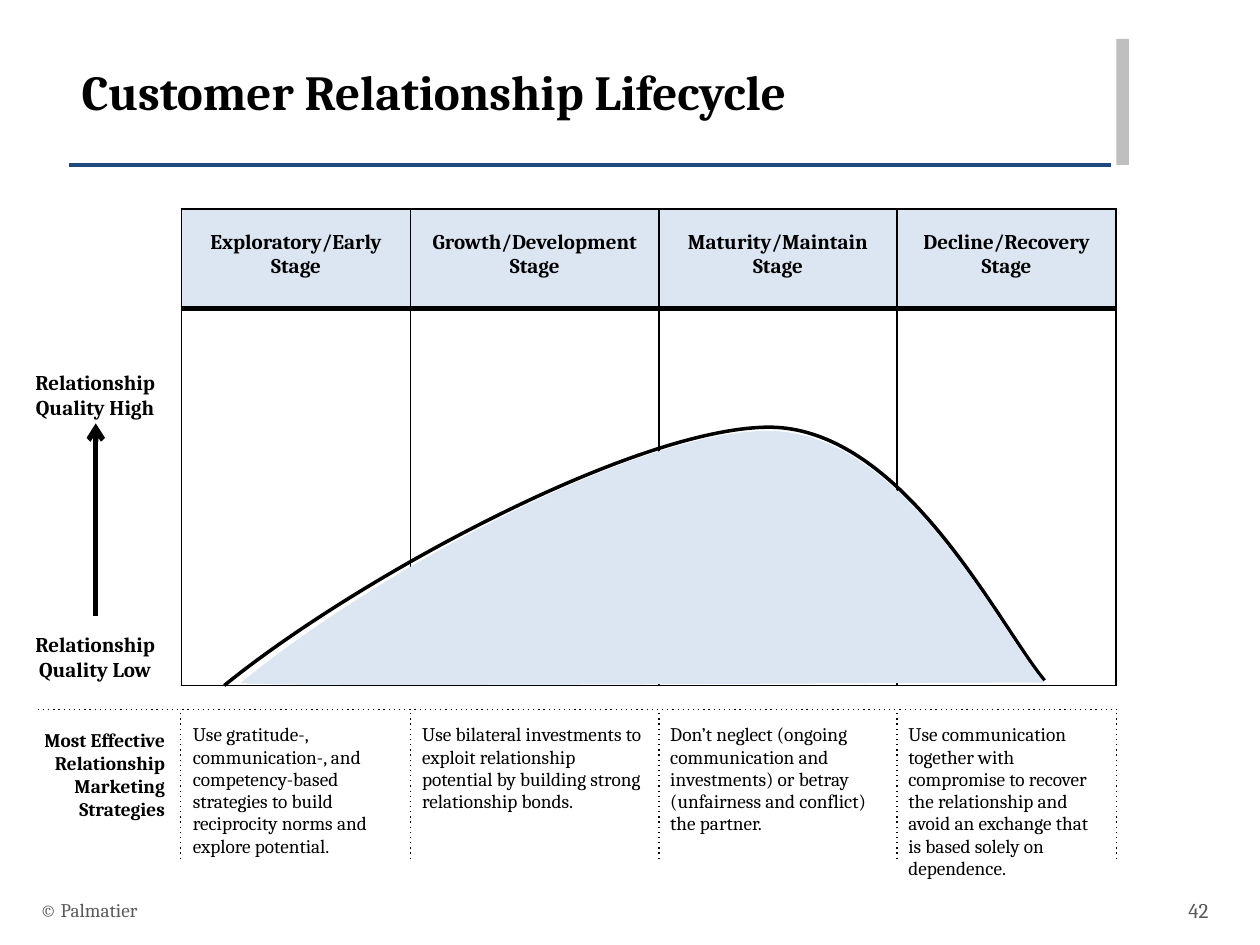
from dataclasses import dataclass
from itertools import accumulate
from typing import NamedTuple

from lxml import etree
from pptx import Presentation, util as u
from pptx.dml.color import RGBColor
from pptx.enum import shapes, text
from pptx.oxml import ns


@dataclass(frozen=True)
class Theme:
    font: str = "Cambria"
    ink: str = "000000"
    muted: str = "595959"
    rule: str = "1F497D"
    bar: str = "BFBFBF"
    tint: str = "DCE6F2"
    paper: str = "FFFFFF"
    title: int = 28
    label: int = 12
    body: int = 11
    tiny: int = 8


class Stage(NamedTuple):
    name: str
    width: float
    strategy: str


class Label(NamedTuple):
    wording: str
    box: tuple[float, float, float, float]
    style: dict


class Rule(NamedTuple):
    start: tuple[float, float]
    end: tuple[float, float]
    weight: float
    color: str
    dotted: bool = False
    arrow: bool = False


class RowStyle(NamedTuple):
    height: float
    fill: str | None
    borders: dict[str, int]


THEME = Theme()
LEFT, CENTER, RIGHT = text.PP_ALIGN.LEFT, text.PP_ALIGN.CENTER, text.PP_ALIGN.RIGHT
MIDDLE = text.MSO_ANCHOR.MIDDLE
TABLE_LEFT, TABLE_TOP = 1.44, 1.66
NO_STYLE_NO_GRID = "{2D5ABB26-0587-4C30-8999-92F81FD0307C}"

STAGES = [
    Stage("Exploratory/Early Stage", 1.82,
          "Use gratitude-, communication-, and competency-based strategies "
          "to build reciprocity norms and explore potential."),
    Stage("Growth/Development Stage", 1.97,
          "Use bilateral investments to exploit relationship potential by "
          "building strong relationship bonds."),
    Stage("Maturity/Maintain Stage", 1.89,
          "Don’t neglect (ongoing communication and investments) or betray "
          "(unfairness and conflict) the partner."),
    Stage("Decline/Recovery Stage", 1.74,
          "Use communication together with compromise to recover the relationship "
          "and avoid an exchange that is based solely on dependence."),
]
EDGES = list(accumulate((stage.width for stage in STAGES), initial=TABLE_LEFT))

ROWS = [
    RowStyle(0.79, THEME.tint, {"L": 1, "R": 1, "T": 1, "B": 3}),
    RowStyle(2.99, THEME.paper, {"L": 1, "R": 1, "T": 3, "B": 1}),
    RowStyle(0.26, None, {"T": 1}),
    RowStyle(2.03, None, {}),
]

CURVE = [(1.78, 5.44), (2.84, 4.58), (5.05, 3.39), (6.11, 3.39),
         (7.18, 3.40), (7.93, 4.97), (8.29, 5.40)]
AREA = [(1.91, 5.42), (2.97, 4.55), (5.05, 3.41), (6.11, 3.42),
        (7.18, 3.43), (7.93, 5.00), (8.29, 5.42),
        (8.23, 5.41), (1.89, 5.46), (1.91, 5.42)]

RULES = [
    Rule((0.55, 1.31), (8.82, 1.31), 2, THEME.rule),
    Rule((0.76, 4.89), (0.76, 3.36), 3, THEME.ink, arrow=True),
    Rule((0.3, 5.63), (EDGES[-1], 5.63), 0.75, THEME.ink, dotted=True),
    *(Rule((x, 5.66), (x, 6.81), 0.75, THEME.ink, dotted=True)
      for x in (TABLE_LEFT - 0.01, *EDGES[1:])),
]

AXIS_STYLE = dict(size=THEME.label, bold=True, align=CENTER)
LABELS = [
    Label("Customer Relationship Lifecycle", (0.55, 0.45, 8.26, 0.8),
          dict(size=THEME.title, bold=True, inset=0.1)),
    Label("Relationship Quality High", (0.08, 2.89, 1.35, 0.49), AXIS_STYLE),
    Label("Relationship Quality Low", (0.08, 4.97, 1.35, 0.49), AXIS_STYLE),
    Label("Most Effective Relationship Marketing Strategies", (0, 5.74, 1.4, 0.83),
          dict(size=THEME.body, bold=True, align=RIGHT)),
    Label("© Palmatier", (0.22, 7.02, 6.7, 0.4),
          dict(size=THEME.body, color=THEME.muted, anchor=MIDDLE, inset=0.1)),
    Label("42", (9.08, 7.02, 0.61, 0.4),
          dict(size=THEME.label, color=THEME.muted, align=RIGHT, anchor=MIDDLE, inset=0.1)),
]


def rgb(color: str) -> RGBColor:
    return RGBColor.from_string(color)


def write(frame, wording: str, *, size: int, bold: bool = False,
          color: str = THEME.ink, align=LEFT) -> None:
    frame.word_wrap = True
    paragraph = frame.paragraphs[0]
    paragraph.alignment = align
    run = paragraph.add_run()
    run.text = wording
    run.font.name, run.font.size, run.font.bold = THEME.font, u.Pt(size), bold
    run.font.color.rgb = rgb(color)


def add_label(slide, label: Label) -> None:
    frame = slide.shapes.add_textbox(*map(u.Inches, label.box)).text_frame
    style = dict(label.style)
    frame.vertical_anchor = style.pop("anchor", text.MSO_ANCHOR.TOP)
    frame.margin_left = frame.margin_right = u.Inches(style.pop("inset", 0.09))
    frame.margin_top = frame.margin_bottom = u.Inches(0.04)
    write(frame, label.wording, **style)


def add_rule(slide, rule: Rule) -> None:
    connector = slide.shapes.add_connector(
        shapes.MSO_CONNECTOR.STRAIGHT, *map(u.Inches, rule.start + rule.end))
    connector.line.color.rgb = rgb(rule.color)
    connector.line.width = u.Pt(rule.weight)
    outline = connector.line._get_or_add_ln()
    if rule.dotted:
        etree.SubElement(outline, ns.qn("a:prstDash"), val="dot")
    if rule.arrow:
        etree.SubElement(outline, ns.qn("a:tailEnd"), type="arrow")
    etree.SubElement(connector._element.spPr, ns.qn("a:effectLst"))


def add_curve(slide, points: list[tuple[float, float]], fill: str | None = None) -> None:
    """Draw chained cubic curves: a filled area, or an open black line without a fill."""
    builder = slide.shapes.build_freeform(*map(u.Inches, points[0]))
    builder.add_line_segments([tuple(map(u.Inches, point)) for point in points[3::3]],
                              close=fill is not None)
    shape = builder.convert_to_shape()
    for i, segment in enumerate(list(shape._element.iter(ns.qn("a:lnTo")))):
        bezier = etree.Element(ns.qn("a:cubicBezTo"))
        for x, y in points[3 * i + 1:3 * i + 4]:
            etree.SubElement(bezier, ns.qn("a:pt"), x=str(u.Inches(x) - shape.left),
                             y=str(u.Inches(y) - shape.top))
        segment.getparent().replace(segment, bezier)
    shape.shadow.inherit = False
    if fill:
        shape.fill.solid()
        shape.fill.fore_color.rgb = rgb(fill)
        shape.line.fill.background()
    else:
        shape.fill.background()
        shape.line.color.rgb = rgb(THEME.ink)
        shape.line.width = u.Pt(2)


def style_cell(cell, style: RowStyle) -> None:
    properties = cell._tc.get_or_add_tcPr()
    for side in "LRTB":
        weight = style.borders.get(side, 0)
        border = etree.SubElement(properties, ns.qn(f"a:ln{side}"), w=str(u.Pt(weight)))
        if weight:
            paint = etree.SubElement(border, ns.qn("a:solidFill"))
            etree.SubElement(paint, ns.qn("a:srgbClr"), val=THEME.ink)
        else:
            etree.SubElement(border, ns.qn("a:noFill"))
    if style.fill:
        cell.fill.solid()
        cell.fill.fore_color.rgb = rgb(style.fill)
    else:
        cell.fill.background()
    cell.margin_left = cell.margin_right = u.Inches(0.09)
    cell.margin_top = cell.margin_bottom = u.Inches(0.05)


def add_stage_table(slide) -> None:
    height = sum(row.height for row in ROWS)
    table = slide.shapes.add_table(
        len(ROWS), len(STAGES),
        *map(u.Inches, (TABLE_LEFT, TABLE_TOP, EDGES[-1] - TABLE_LEFT, height))).table
    table.first_row = table.horz_banding = False
    table._tbl.tblPr.find(ns.qn("a:tableStyleId")).text = NO_STYLE_NO_GRID
    for r, style in enumerate(ROWS):
        table.rows[r].height = u.Inches(style.height)
        for c, stage in enumerate(STAGES):
            table.columns[c].width = u.Inches(stage.width)
            cell = table.cell(r, c)
            style_cell(cell, style)
            if r == 0:
                cell.vertical_anchor = text.MSO_ANCHOR.BOTTOM
                cell.margin_bottom = u.Inches(0.24)
                write(cell.text_frame, stage.name, size=THEME.label, bold=True, align=CENTER)
            elif r == len(ROWS) - 1:
                write(cell.text_frame, stage.strategy, size=THEME.body)
            else:
                etree.SubElement(cell.text_frame.paragraphs[0]._p, ns.qn("a:endParaRPr"),
                                 sz=str(THEME.tiny * 100))


def main() -> None:
    presentation = Presentation()
    presentation.slide_width, presentation.slide_height = u.Inches(10), u.Inches(7.5)
    slide = presentation.slides.add_slide(presentation.slide_layouts[6])
    bar = slide.shapes.add_shape(
        shapes.MSO_SHAPE.RECTANGLE, *map(u.Inches, (8.86, 0.31, 0.1, 1)))
    bar.shadow.inherit = False
    bar.fill.solid()
    bar.fill.fore_color.rgb = rgb(THEME.bar)
    bar.line.fill.background()
    add_stage_table(slide)
    add_curve(slide, CURVE)
    for rule in RULES:
        add_rule(slide, rule)
    add_curve(slide, AREA, fill=THEME.tint)
    for label in LABELS:
        add_label(slide, label)
    presentation.save("out.pptx")


if __name__ == "__main__":
    main()
